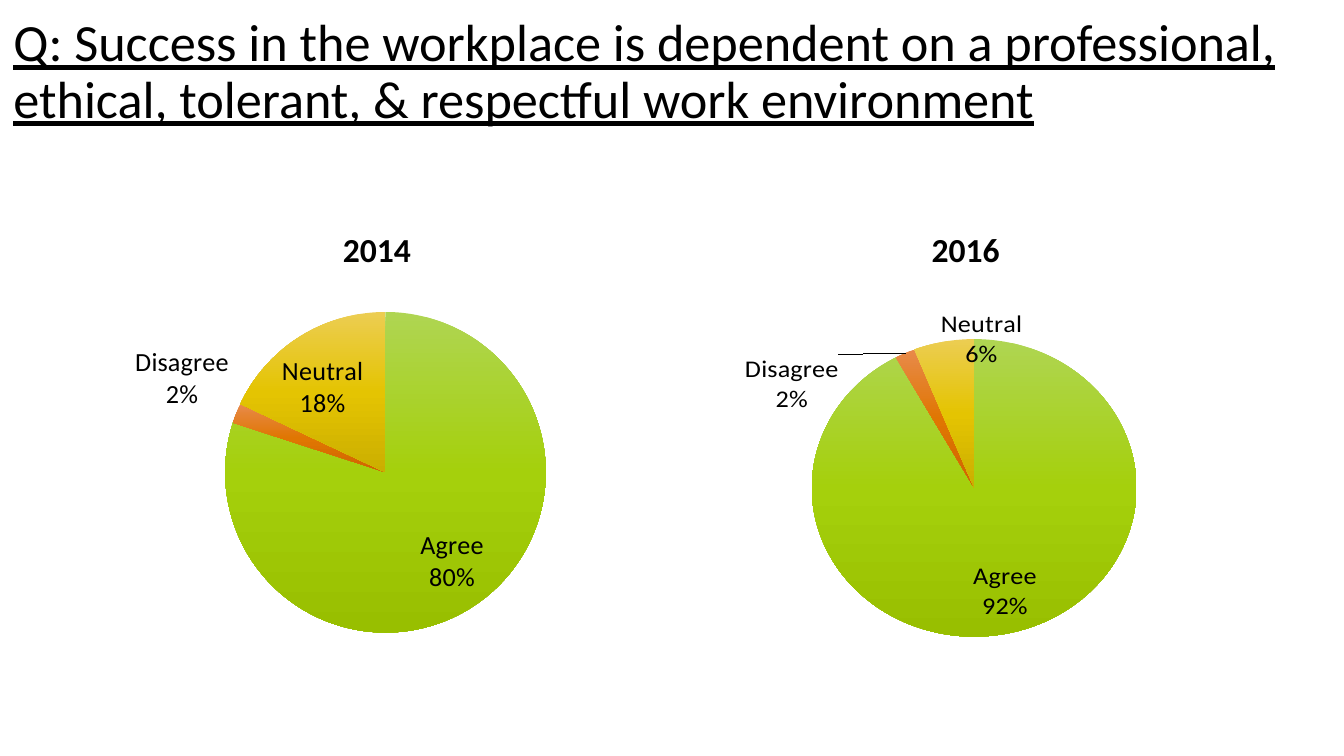
from copy import deepcopy

from pptx import Presentation
from pptx.chart.data import CategoryChartData
from pptx.dml.color import RGBColor
from pptx.enum.chart import XL_CHART_TYPE, XL_LABEL_POSITION
from pptx.enum.text import MSO_ANCHOR, MSO_AUTO_SIZE, PP_ALIGN
from pptx.oxml import parse_xml
from pptx.oxml.ns import nsdecls, qn
from pptx.util import Inches, Pt

FONT = "Calibri"
BLACK = RGBColor(0x00, 0x00, 0x00)
GREENS = [RGBColor(0xAF, 0xD5, 0x52), RGBColor(0xA5, 0xD0, 0x0C), RGBColor(0x98, 0xBF, 0x00)]
ORANGES = [RGBColor(0xE8, 0x8A, 0x4A), RGBColor(0xE0, 0x76, 0x02), RGBColor(0xCF, 0x64, 0x00)]
YELLOWS = [RGBColor(0xEC, 0xCD, 0x52), RGBColor(0xE4, 0xC4, 0x02), RGBColor(0xCB, 0xAE, 0x00)]
BLUES = [RGBColor(0x7D, 0xC1, 0xEF)] * 3
SLICES = [GREENS, ORANGES, YELLOWS, BLUES]
CATEGORIES = ["Agree", "Disagree", "Neutral", "No Response"]
HEAD_TOP, HEAD_HEIGHT = 1.38, 0.68
CHART_TOP, CHART_HEIGHT = 2.05, 3.02
COLUMNS = [
    ("2014", 0.69, 4.23, (80, 2, 18, None), (0.23, 0.09, 0.57, 0.79), {}),
    ("2016", 5.06, 4.25, (92, 2, 6, None), (0.23, 0.08, 0.57, 0.8),
     {1: (-0.11, 0.18), 2: (0.14, 0.07)}),
]


def style_font(font, size):
    font.name = FONT
    font.size = Pt(size)
    font.color.rgb = BLACK


def write_text(tf, text, size, anchor, align):
    tf.word_wrap = True
    tf.auto_size = MSO_AUTO_SIZE.NONE
    tf.vertical_anchor = anchor
    p = tf.paragraphs[0]
    p.alignment = align
    p.line_spacing = 0.9
    r = p.add_run()
    r.text = text
    style_font(r.font, size)
    return r


def add_title(s, prs, text):
    sp = s.shapes.title
    sp.left, sp.top, sp.width, sp.height = 0, 0, prs.slide_width, Inches(1.09)
    r = write_text(sp.text_frame, text, 28, MSO_ANCHOR.MIDDLE, PP_ALIGN.LEFT)
    r.font.underline = True


def add_heading(s, text, left, width):
    sp = s.shapes.add_textbox(Inches(left), Inches(HEAD_TOP), Inches(width), Inches(HEAD_HEIGHT))
    r = write_text(sp.text_frame, text, 18, MSO_ANCHOR.BOTTOM, PP_ALIGN.CENTER)
    r.font.bold = True


def gradient(colors):
    stops = "".join(
        f'<a:gs pos="{i * 50000}"><a:srgbClr val="{c}"/></a:gs>' for i, c in enumerate(colors))
    return parse_xml(f'<a:gradFill {nsdecls("a")} rotWithShape="1"><a:gsLst>{stops}</a:gsLst>'
                     '<a:lin ang="5400000" scaled="0"/></a:gradFill>')


def manual_layout(**values):
    items = "".join(f'<c:{k} val="{v}"/>' for k, v in values.items())
    return parse_xml(f'<c:layout {nsdecls("c")}><c:manualLayout>{items}'
                     '</c:manualLayout></c:layout>')


def place_plot(chart, plot):
    area = chart._chartSpace.find(".//" + qn("c:plotArea"))
    for old in area.findall(qn("c:layout")):
        area.remove(old)
    x, y, w, h = plot
    area.insert(0, manual_layout(layoutTarget="inner", xMode="edge", yMode="edge",
                                 x=x, y=y, w=w, h=h))


def fill_slices(series):
    for i, colors in enumerate(SLICES):
        series.points[i].format.line.fill.background()
        point = series._element.findall(qn("c:dPt"))[i]
        point.find(qn("c:spPr")).insert(0, gradient(colors))


def label_slices(series, offsets):
    labels = series.data_labels
    labels.show_value = False
    labels.show_category_name = True
    labels.show_percentage = True
    labels.number_format = "0%"
    labels.number_format_is_linked = False
    labels.position = XL_LABEL_POSITION.BEST_FIT
    style_font(labels.font, 14)
    root = labels._element
    separator = parse_xml(f'<c:separator {nsdecls("c")}>\n</c:separator>')
    root.find(qn("c:showBubbleSize")).addnext(separator)
    shared = [e for e in root if e.tag != qn("c:showLeaderLines")]
    for n, (idx, (x, y)) in enumerate(offsets.items()):
        label = parse_xml(f'<c:dLbl {nsdecls("c")}><c:idx val="{idx}"/></c:dLbl>')
        label.append(manual_layout(x=x, y=y))
        label.extend([deepcopy(e) for e in shared])
        root.insert(n, label)


def add_pie(s, left, width, values, plot, offsets):
    data = CategoryChartData()
    data.categories = CATEGORIES
    data.add_series("Series 1", values)
    chart = s.shapes.add_chart(XL_CHART_TYPE.PIE, Inches(left), Inches(CHART_TOP),
                               Inches(width), Inches(CHART_HEIGHT), data).chart
    chart.has_legend = False
    chart.has_title = False
    style_font(chart.font, 18)
    chart.plots[0].vary_by_categories = True
    series = chart.plots[0].series[0]
    fill_slices(series)
    label_slices(series, offsets)
    place_plot(chart, plot)


def main():
    prs = Presentation()
    prs.slide_width = Inches(10)
    prs.slide_height = prs.slide_width * 9 // 16
    s = prs.slides.add_slide(prs.slide_layouts[5])
    add_title(s, prs, "Q: Success in the workplace is dependent on a professional, "
                      "ethical, tolerant, & respectful work environment")
    for year, left, width, values, plot, offsets in COLUMNS:
        add_heading(s, year, left, width)
        add_pie(s, left, width, values, plot, offsets)
    prs.save("out.pptx")


if __name__ == "__main__":
    main()
